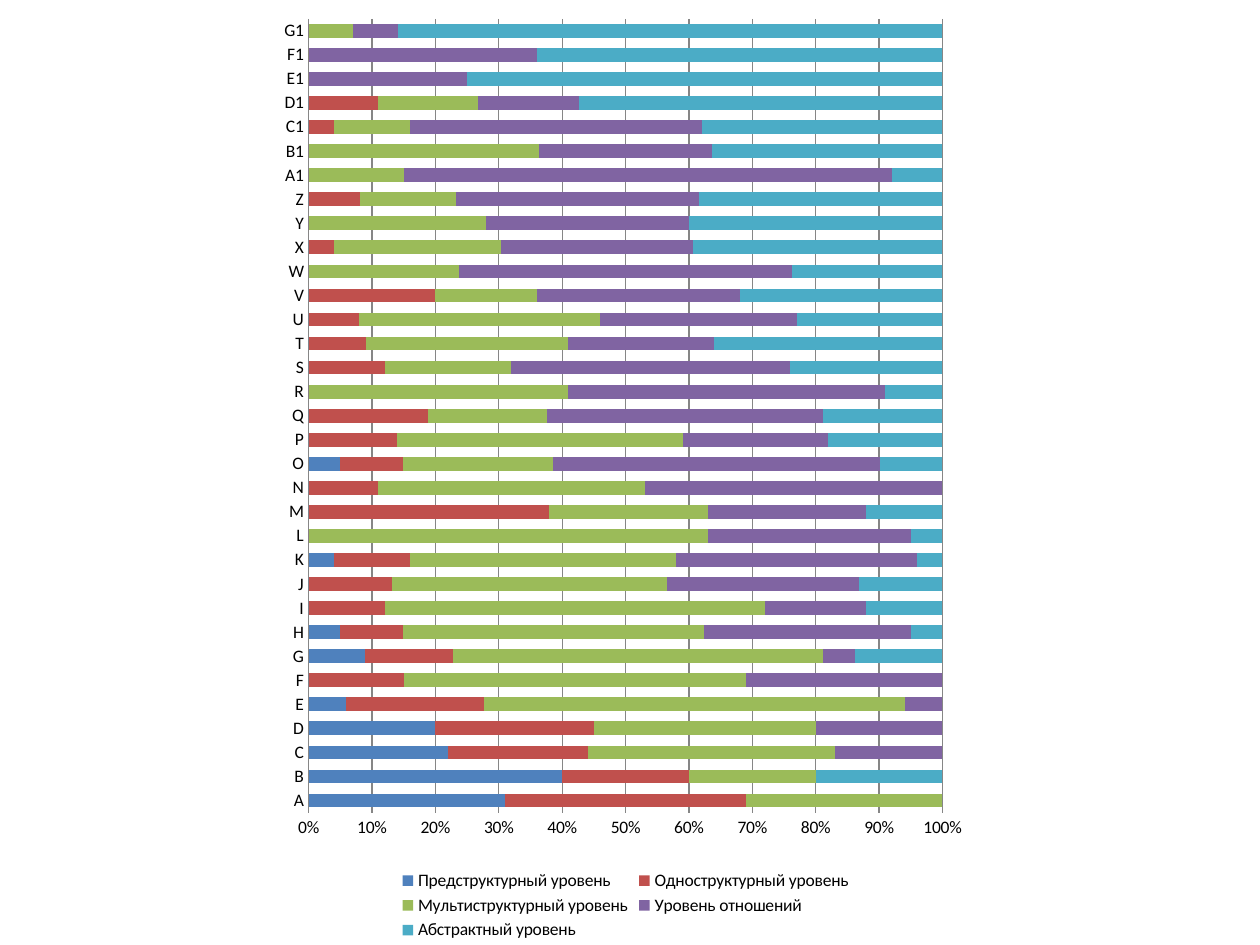
"""Build a slide with a 100% stacked bar chart of structural levels for items A to G1."""
from lxml.etree import SubElement
from pptx import Presentation
from pptx.chart.data import CategoryChartData
from pptx.dml.color import RGBColor
from pptx.enum.chart import XL_CHART_TYPE as ChartType, XL_LEGEND_POSITION as LegendPos
from pptx.enum.chart import XL_TICK_MARK as TickMark
from pptx.oxml.ns import qn
from pptx.util import Inches, Pt

LETTERS = "ABCDEFGHIJKLMNOPQRSTUVWXYZ"
ITEMS = list(LETTERS) + [f"{letter}1" for letter in LETTERS[:7]]
LEVELS = [
    ("Предструктурный уровень", "4F81BD",
     [31, 40, 22, 20, 6, 0, 9, 5, 0, 0, 4, 0, 0, 0, 5] + [0] * 18),
    ("Одноструктурный уровень", "C0504D",
     [38, 20, 22, 25, 22, 15, 14, 10, 12, 13, 12, 0, 38, 11, 10, 14, 19,
      0, 12, 9, 8, 20, 0, 4, 0, 8, 0, 0, 4, 11, 0, 0, 0]),
    ("Мультиструктурный уровень", "9BBB59",
     [31, 20, 39, 35, 67, 54, 59, 48, 60, 43, 42, 63, 25, 42, 24, 45, 19,
      41, 20, 32, 38, 16, 24, 26, 28, 15, 15, 36, 12, 16, 0, 0, 7]),
    ("Уровень отношений", "8064A2",
     [0, 0, 17, 20, 6, 31, 5, 33, 16, 30, 38, 32, 25, 47, 52, 23, 44,
      50, 44, 23, 31, 32, 53, 30, 32, 38, 77, 27, 46, 16, 25, 36, 7]),
    ("Абстрактный уровень", "4BACC6",
     [0, 20, 0, 0, 0, 0, 14, 5, 12, 13, 4, 5, 12, 0, 10, 18, 19,
      9, 24, 36, 23, 32, 24, 39, 40, 38, 8, 36, 38, 58, 75, 64, 85]),
]
CHART_BOX = (2.17, 0, 5.59, 7.5)
PLOT_SHARES = {"x": 0.05, "y": 0.02, "w": 0.9, "h": 0.84}
GRID_GREY = "868686"


def paint(color_format, color):
    """Set a fill or line format to one solid colour."""
    fill = getattr(color_format, "fill", color_format)
    fill.solid()
    fill.fore_color.rgb = RGBColor.from_string(color)


def place_plot(chart, shares):
    """Fix the inner plot area at the given shares of the chart."""
    plot_area = chart.plots[0]._element.getparent()
    layout = plot_area.find(qn("c:layout"))
    if layout is None:
        layout = SubElement(plot_area, qn("c:layout"))
        plot_area.insert(0, layout)
    manual = SubElement(layout, qn("c:manualLayout"))
    settings = [("layoutTarget", "inner"), ("xMode", "edge"), ("yMode", "edge")]
    for tag, value in settings + list(shares.items()):
        SubElement(manual, qn(f"c:{tag}")).set("val", str(value))


def add_level_chart(slide):
    """Add the stacked chart with its axes and legend."""
    levels = CategoryChartData(number_format="0")
    levels.categories = ITEMS
    for name, _, shares in LEVELS:
        levels.add_series(name, shares)
    chart = slide.shapes.add_chart(
        ChartType.BAR_STACKED_100, *map(Inches, CHART_BOX), levels).chart
    chart.has_title = False
    chart.font.name = "Calibri"
    chart.font.size = Pt(10)
    chart.font.color.rgb = RGBColor.from_string("000000")

    bars = chart.plots[0]
    bars.gap_width, bars.overlap, bars.vary_by_categories = 75, 100, False
    for series, (_, color, _) in zip(bars.series, LEVELS):
        paint(series.format, color)

    for axis in (chart.category_axis, chart.value_axis):
        axis.major_tick_mark = axis.minor_tick_mark = TickMark.NONE
    paint(chart.category_axis.format.line, GRID_GREY)
    percent = chart.value_axis
    percent.minimum_scale, percent.maximum_scale, percent.major_unit = 0, 1, 0.1
    percent.format.line.fill.background()
    percent.has_major_gridlines = True
    paint(percent.major_gridlines.format.line, GRID_GREY)
    percent.tick_labels.number_format = "0%"
    percent.tick_labels.number_format_is_linked = False

    chart.has_legend = True
    chart.legend.position = LegendPos.BOTTOM
    chart.legend.include_in_layout = False
    place_plot(chart, PLOT_SHARES)


def main():
    """Create the presentation and save it."""
    deck = Presentation()
    deck.slide_width, deck.slide_height = Inches(10), Inches(7.5)
    add_level_chart(deck.slides.add_slide(deck.slide_layouts[6]))
    deck.save("out.pptx")


if __name__ == "__main__":
    main()
